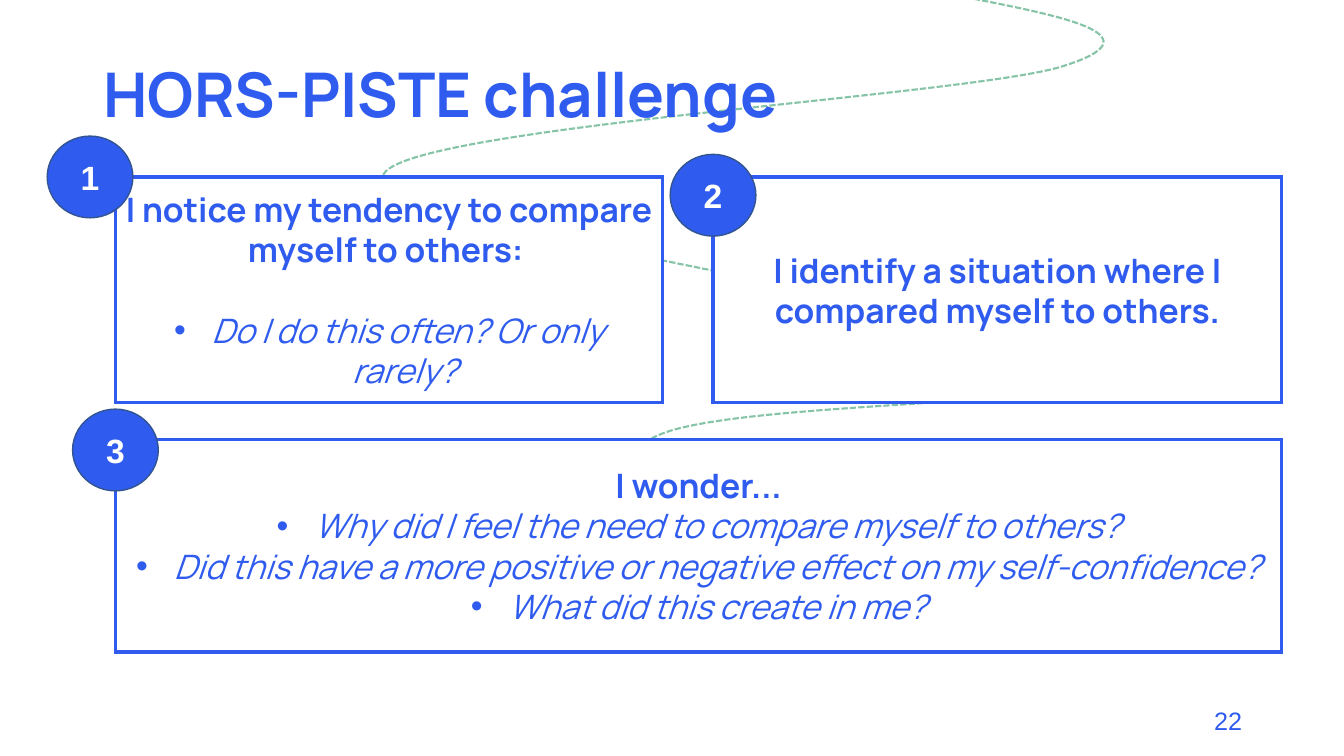
from lxml.etree import SubElement
from pptx import Presentation
from pptx.dml.color import RGBColor
from pptx.enum.dml import MSO_LINE
from pptx.enum.shapes import MSO_SHAPE
from pptx.enum.text import MSO_ANCHOR, PP_ALIGN
from pptx.oxml import parse_xml
from pptx.oxml.ns import nsdecls, qn
from pptx.util import Cm, Pt

# Content: heading, questions, gap before the questions (points)
TITLE = "HORS-PISTE challenge"
NUMBER = "22"
CARDS = [
    ("I notice my tendency to compare myself to others: ",
     ["Do I do this often? Or only rarely? "], 28.8),
    ("I identify a situation where I compared myself to others.", [], 0),
    ("I wonder...",
     ["Why did I feel the need to compare myself to others?",
      "Did this have a more positive or negative effect on my self-confidence?",
      "What did this create in me?"], 0),
]

# Places in cm: left, top, width, height
BOXES = [(2.91, 4.46, 13.79, 5.69), (17.97, 4.46, 14.33, 5.69),
         (2.91, 11.07, 29.39, 5.36)]
BADGES = [(1.19, 3.43), (16.89, 3.89), (1.83, 10.31)]
BADGE = (2.16, 2.06)

# Trail: start, then two handles and an end for each bend
START = (24.54, -0.03)
BENDS = [
    ((26.87, 0.43), (29.24, 0.91), (26.75, 1.68)),
    ((24.26, 2.44), (9.42, 3.25), (9.65, 4.5)),
    ((9.86, 5.77), (26.92, 8.13), (28.07, 9.22)),
    ((29.21, 10.31), (18.34, 10.01), (16.48, 11.02)),
    ((14.63, 12.04), (15.8, 13.72), (16.94, 15.37)),
]

THEME = {
    "blue": RGBColor(0x2F, 0x5C, 0xEE), "edge": RGBColor(0x32, 0x54, 0x91),
    "green": RGBColor(0x86, 0xC4, 0xA7), "white": RGBColor(0xFF, 0xFF, 0xFF),
    "head": "Manrope", "plain": "Arial",
    "title": 44, "body": 24, "small": 18,
}

deck = Presentation()
deck.slide_width, deck.slide_height = Cm(33.87), Cm(19.05)
slide = deck.slides.add_slide(deck.slide_layouts[6])
shapes = slide.shapes


def write(frame, text, size="body", font="head", color="blue", bold=False,
          italic=False, align=PP_ALIGN.CENTER, bullet=False, gap=0, lead=None):
    """Fill the first paragraph of the frame, or add one after it."""
    frame.word_wrap = True
    frame.vertical_anchor = MSO_ANCHOR.MIDDLE
    para = frame.add_paragraph() if frame.text else frame.paragraphs[0]
    if bullet:
        props = para._p.get_or_add_pPr()
        props.set("marL", str(Cm(0.95)))
        props.set("indent", str(-Cm(0.95)))
        props.append(parse_xml(f'<a:buFont {nsdecls("a")} typeface="Arial"/>'))
        props.append(parse_xml(f'<a:buChar {nsdecls("a")} char="•"/>'))
    para.alignment = align
    if gap:
        para.space_before = Pt(gap)
    if lead:
        para.line_spacing = lead
    run = para.add_run()
    run.text = text
    run.font.name = THEME[font]
    run.font.size = Pt(THEME[size])
    run.font.color.rgb = THEME[color]
    run.font.bold, run.font.italic = bold, italic


def outline(shape, color, width):
    shape.shadow.inherit = False
    shape.line.color.rgb = THEME[color]
    shape.line.width = Pt(width)


def draw(kind, place, fill, line, width):
    shape = shapes.add_shape(kind, *map(Cm, place))
    shape.fill.solid()
    shape.fill.fore_color.rgb = THEME[fill]
    outline(shape, line, width)
    SubElement(shape.line._ln, qn("a:miter"), lim="800000")
    return shape.text_frame


def label(place):
    return shapes.add_textbox(*map(Cm, place)).text_frame


# Dashed trail: straight segments between the ends, then bent by the handles
route = shapes.build_freeform(*map(Cm, START))
route.add_line_segments([tuple(map(Cm, bend[-1])) for bend in BENDS],
                        close=False)
trail = route.convert_to_shape()
for step, bend in zip(list(trail._element.iter(qn("a:lnTo"))), BENDS):
    curve = SubElement(step.getparent(), qn("a:cubicBezTo"))
    for x, y in bend:
        SubElement(curve, qn("a:pt"), x=str(Cm(x) - trail.left),
                   y=str(Cm(y) - trail.top))
    step.getparent().replace(step, curve)
trail.fill.background()
outline(trail, "green", 1.5)
trail.line.dash_style = MSO_LINE.SQUARE_DOT

# Page number
write(label((23.93, 17.65, 7.62, 1.02)), NUMBER, size="small", font="plain",
      align=PP_ALIGN.RIGHT)

# Cards
for place, (head, asks, gap) in zip(BOXES, CARDS):
    frame = draw(MSO_SHAPE.RECTANGLE, place, "white", "blue", 2.25)
    write(frame, head, bold=True)
    for n, ask in enumerate(asks):
        write(frame, ask, italic=True, bullet=True, gap=0 if n else gap)

# Title
write(label((2.36, 0.61, 29.21, 3.68)), TITLE, size="title", bold=True,
      align=PP_ALIGN.LEFT, lead=0.9)

# Numbered badges
for n, spot in enumerate(BADGES, 1):
    frame = draw(MSO_SHAPE.OVAL, spot + BADGE, "blue", "edge", 1)
    write(frame, str(n), font="plain", color="white", bold=True)

deck.save("out.pptx")
